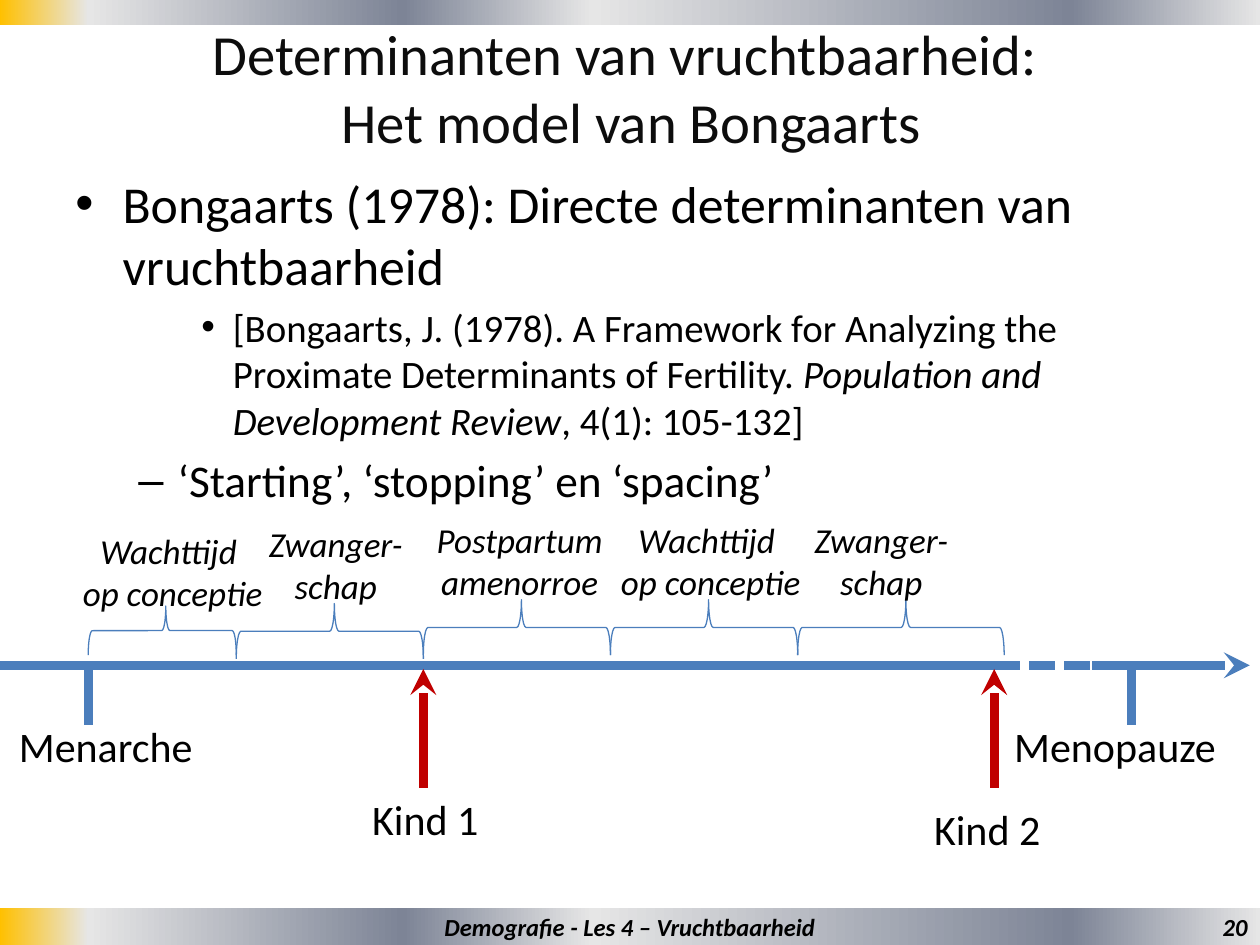
from itertools import pairwise
from lxml import etree
from pptx import Presentation
from pptx import util as u
from pptx.dml.color import RGBColor
from pptx.enum import dml, shapes, text
from pptx.oxml import ns

LEFT, CENTER, RIGHT = text.PP_ALIGN.LEFT, text.PP_ALIGN.CENTER, text.PP_ALIGN.RIGHT


def color(value):
    return RGBColor.from_string(value)


def points(*lengths):
    return [u.Pt(length) for length in lengths]


def add_element(parent, tag, **attributes):
    return etree.SubElement(parent, ns.qn(tag), attributes)


class SlideBuilder:
    font = "Calibri"
    ink = "000000"
    blue = "4B7EBC"
    red = "C00000"
    line_width = 5
    band_stops = [(0, "FFC000"), (7, "E6E6E6"), (32, "7D8496"),
                  (47, "E6E6E6"), (85, "7D8496"), (100, "E6E6E6")]

    def __init__(self, slide):
        self.slide = slide

    def format_runs(self, paragraph, size, bold=False, italic=False, ink=None):
        for run in paragraph.runs:
            run.font.name = self.font
            run.font.size = u.Pt(size)
            run.font.bold = bold
            run.font.italic = italic
            run.font.color.rgb = color(ink or self.ink)

    def set_words(self, shape, words, size, align=LEFT, **style):
        paragraph = shape.text_frame.paragraphs[0]
        paragraph.text = words
        paragraph.alignment = align
        self.format_runs(paragraph, size, **style)

    def text_box(self, left, top, width, height, wrap=False, middle=False):
        box = self.slide.shapes.add_textbox(*points(left, top, width, height))
        box.text_frame.word_wrap = wrap
        if middle:
            box.text_frame.vertical_anchor = text.MSO_ANCHOR.MIDDLE
        return box

    def label(self, center, top, width, height, words, size, italic=False):
        box = self.text_box(center - width / 2, top, width, height)
        self.set_words(box, words, size, CENTER, italic=italic)

    def band(self, top, height):
        band = self.slide.shapes.add_shape(
            shapes.MSO_SHAPE.RECTANGLE, *points(0, top, 720, height))
        band.shadow.inherit = False
        band.line.fill.background()
        band.fill.gradient()
        band.fill.gradient_angle = 0
        stops = band._element.spPr.find(ns.qn("a:gradFill")).find(ns.qn("a:gsLst"))
        for stop in list(stops):
            stops.remove(stop)
        for position, value in self.band_stops:
            stop = add_element(stops, "a:gs", pos=str(position * 1000))
            add_element(stop, "a:srgbClr", val=value)
        band.text_frame.vertical_anchor = text.MSO_ANCHOR.MIDDLE
        return band

    def bullet(self, paragraph, parts, size, level, margin, hanging, mark):
        for words, italic in parts:
            run = paragraph.add_run()
            run.text = words
        self.format_runs(paragraph, size)
        for run, (words, italic) in zip(paragraph.runs, parts):
            run.font.italic = italic
        paragraph.level = level
        paragraph.space_before = u.Pt(round(size * 0.2, 1))
        properties = paragraph._p.get_or_add_pPr()
        properties.set("marL", str(u.Pt(margin)))
        properties.set("indent", str(u.Pt(-hanging)))
        add_element(properties, "a:buFont", typeface="Arial")
        add_element(properties, "a:buChar", char=mark)

    def line(self, start, end, ink=None, arrow=False, dash=None):
        line = self.slide.shapes.add_connector(
            shapes.MSO_CONNECTOR.STRAIGHT, *points(*start, *end))
        line.line.color.rgb = color(ink or self.blue)
        line.line.width = u.Pt(self.line_width)
        if dash:
            line.line.dash_style = dash
        if arrow:
            outline = line._element.spPr.find(ns.qn("a:ln"))
            add_element(outline, "a:tailEnd", type="stealth")
        add_element(line._element.spPr, "a:effectLst")

    def brace(self, left, right, bottom, depth):
        span = right - left
        middle = (left + right) / 2
        brace = self.slide.shapes.add_shape(
            shapes.MSO_SHAPE.LEFT_BRACE,
            *points(middle - depth / 2, bottom - (depth + span) / 2, depth, span))
        brace.rotation = 90
        brace.adjustments[0] = 0.083
        brace.adjustments[1] = 0.476
        brace.shadow.inherit = False
        brace.fill.background()
        brace.line.color.rgb = color(self.blue)
        brace.line.width = u.Pt(0.75)


def main():
    presentation = Presentation()
    presentation.slide_width, presentation.slide_height = points(720, 540)
    builder = SlideBuilder(presentation.slides.add_slide(presentation.slide_layouts[6]))

    builder.band(0, 14.4)
    footer = builder.band(519.1, 20.9)
    builder.set_words(footer, "Demografie - Les 4 – Vruchtbaarheid", 14, CENTER,
                      bold=True, italic=True)
    number = builder.text_box(516, 519.1, 204, 20.9, wrap=True, middle=True)
    builder.set_words(number, "20", 14, RIGHT, bold=True, italic=True)

    title = builder.text_box(36.7, 20.9, 648, 56.9, wrap=True, middle=True)
    builder.set_words(title, "Determinanten van vruchtbaarheid: \nHet model van Bongaarts",
                      32.4, CENTER, ink="0D0D0D")

    body = builder.text_box(36, 94.3, 667.4, 193, wrap=True).text_frame
    bullets = [
        ([("Bongaarts (1978): Directe determinanten van vruchtbaarheid", False)],
         29.6, 0, 27, 27, "•"),
        ([("[Bongaarts, J. (1978). A Framework for Analyzing the Proximate "
           "Determinants of Fertility. ", False),
          ("Population and Development Review", True),
          (", 4(1): 105-132]", False)], 22.2, 2, 90, 18, "•"),
        ([("‘Starting’, ‘stopping’ en ‘spacing’", False)], 25.9, 1, 58.5, 22.5, "–"),
    ]
    for index, bullet in enumerate(bullets):
        paragraph = body.add_paragraph() if index else body.paragraphs[0]
        builder.bullet(paragraph, *bullet)

    axis = 380.2
    first_birth, second_birth, dash_end = 241.9, 568.1, 624.2
    builder.line((dash_end, axis), (714.2, axis), arrow=True)
    builder.line((second_birth, axis), (dash_end, axis),
                 dash=dml.MSO_LINE.SQUARE_DOT)
    builder.line((0, axis), (second_birth, axis))

    for x, center, width, words in [(50.4, 60.5, 115.2, "Menarche"),
                                    (646.6, 637.2, 131, "Menopauze")]:
        builder.line((x, 414), (x, axis))
        builder.label(center, 408.2, width, 36, words, 24)

    for x, center, top, words in [(first_birth, 243, 450, "Kind 1"),
                                  (second_birth, 564.1, 455.8, "Kind 2")]:
        builder.line((x, 450), (x, 382.3), builder.red, arrow=True)
        builder.label(center, top, 75.6, 36, words, 24)

    waiting, pregnancy = "Wachttijd \nop conceptie", "Zwanger-\nschap"
    boundaries = [50.4, 135, first_birth, 348.8, 455.8, 573.8]
    phases = [
        (waiting, 98.6, 298.8, 118, 374.4, 28.1),
        (pregnancy, 191.9, 295.2, 91.4, 376.6, 31.7),
        ("Postpartum\namenorroe", 297, 293, 110.2, 374.4, 31.7),
        (waiting, 406.1, 293, 118, 374.4, 31.7),
        (pregnancy, 503.6, 293, 91.4, 374.4, 31.7),
    ]
    for (left, right), phase in zip(pairwise(boundaries), phases):
        words, center, top, width, bottom, depth = phase
        builder.brace(left, right, bottom, depth)
        builder.label(center, top, width, 55.4, words, 20, italic=True)

    presentation.save("out.pptx")


if __name__ == "__main__":
    main()
